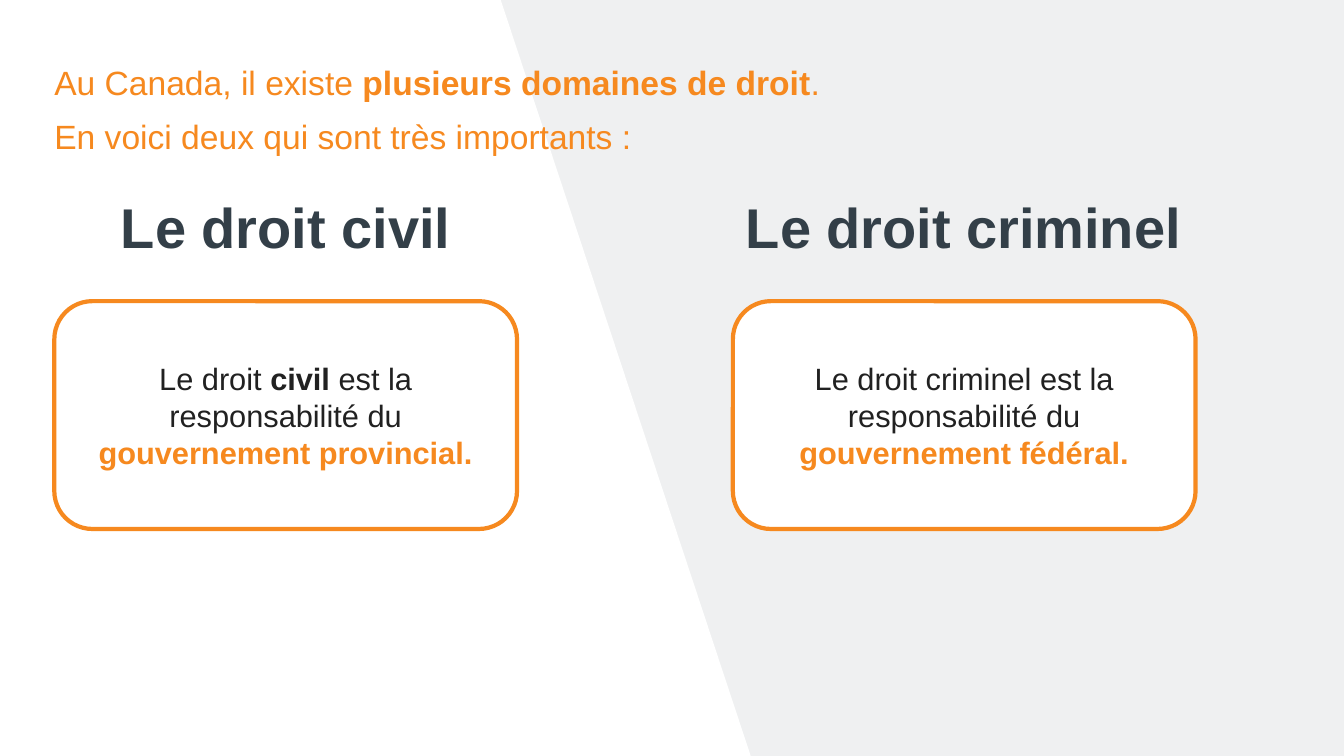
from pptx import Presentation
from pptx.dml.color import RGBColor
from pptx.enum.shapes import MSO_SHAPE
from pptx.enum.text import MSO_ANCHOR, PP_ALIGN
from pptx.util import Cm, Pt

ORANGE = RGBColor(0xF6, 0x89, 0x1F)
SLATE = RGBColor(0x33, 0x3F, 0x48)
DARK = RGBColor(0x21, 0x21, 0x21)
WHITE = RGBColor(0xFF, 0xFF, 0xFF)
PALE_GREY = RGBColor(0xEF, 0xF0, 0xF1)

ROUNDED = MSO_SHAPE.ROUNDED_RECTANGLE
CENTER, LEFT = PP_ALIGN.CENTER, PP_ALIGN.LEFT
TOP, MIDDLE, BOTTOM = MSO_ANCHOR.TOP, MSO_ANCHOR.MIDDLE, MSO_ANCHOR.BOTTOM

WIDTH, HEIGHT = 33.87, 19.05
HEADING_TOP, CARD_TOP = 5.05, 7.59
CARD_WIDTH, CARD_HEIGHT = 11.66, 5.74


class SlideBuilder:
    font_name = "Arial"

    def __init__(self, presentation):
        self.slide = presentation.slides.add_slide(presentation.slide_layouts[6])

    def background(self, color):
        fill = self.slide.background.fill
        fill.solid()
        fill.fore_color.rgb = color

    def panel(self, points, color):
        """Draw a filled polygon through points given in centimetres."""
        corners = [(Cm(x), Cm(y)) for x, y in points]
        builder = self.slide.shapes.build_freeform(*corners[0])
        builder.add_line_segments(corners[1:])
        shape = builder.convert_to_shape()
        shape.shadow.inherit = False
        shape.fill.solid()
        shape.fill.fore_color.rgb = color
        shape.line.fill.background()

    def add_runs(self, paragraph, runs, size, alignment):
        """Fill a paragraph with runs of (text, color, bold)."""
        paragraph.alignment = alignment
        for text, color, bold in runs:
            run = paragraph.add_run()
            run.text = text
            run.font.name = self.font_name
            run.font.size = Pt(size)
            run.font.bold = bold
            run.font.color.rgb = color

    def text_box(self, left, top, width, height, lines, size,
                 alignment=LEFT, anchor=TOP, line_spacing=1.0):
        box = self.slide.shapes.add_textbox(Cm(left), Cm(top), Cm(width), Cm(height))
        frame = box.text_frame
        frame.word_wrap = True
        frame.vertical_anchor = anchor
        frame.margin_left = frame.margin_right = 0
        frame.margin_top = frame.margin_bottom = 0
        for index, runs in enumerate(lines):
            paragraph = frame.add_paragraph() if index else frame.paragraphs[0]
            if index:
                paragraph.space_before = Pt(10)
            paragraph.line_spacing = line_spacing
            self.add_runs(paragraph, runs, size, alignment)

    def heading(self, left, width, text):
        self.text_box(left, HEADING_TOP, width, 2.54, [[(text, SLATE, True)]],
                      size=40, alignment=CENTER, line_spacing=0.9)

    def card(self, left, runs):
        shape = self.slide.shapes.add_shape(
            ROUNDED, Cm(left), Cm(CARD_TOP), Cm(CARD_WIDTH), Cm(CARD_HEIGHT))
        shape.shadow.inherit = False
        shape.fill.solid()
        shape.fill.fore_color.rgb = WHITE
        shape.line.color.rgb = ORANGE
        shape.line.width = Pt(3)
        frame = shape.text_frame
        frame.word_wrap = True
        frame.vertical_anchor = MIDDLE
        self.add_runs(frame.paragraphs[0], runs, 22, CENTER)


def main():
    presentation = Presentation()
    presentation.slide_width, presentation.slide_height = Cm(WIDTH), Cm(HEIGHT)
    builder = SlideBuilder(presentation)

    builder.background(PALE_GREY)
    builder.panel([(0, 0), (12.62, 0), (18.92, HEIGHT), (0, HEIGHT)], WHITE)

    builder.text_box(1.37, 2.67, 21.49, 1.27, [
        [("Au Canada, il existe ", ORANGE, False),
         ("plusieurs domaines de droit", ORANGE, True),
         (".", ORANGE, False)],
        [("En voici deux qui sont très importants :", ORANGE, False)],
    ], size=24, anchor=BOTTOM)

    columns = [
        (1.98, 10.44, "Le droit civil", 1.37, [
            ("Le droit ", DARK, False),
            ("civil", DARK, True),
            (" est la responsabilité du ", DARK, False),
            ("gouvernement provincial.", ORANGE, True)]),
        (17.04, 14.48, "Le droit criminel", 18.47, [
            ("Le droit criminel est la responsabilité du ", DARK, False),
            ("gouvernement fédéral.", ORANGE, True)]),
    ]
    for heading_left, heading_width, title, card_left, runs in columns:
        builder.heading(heading_left, heading_width, title)
        builder.card(card_left, runs)

    presentation.save("out.pptx")


if __name__ == "__main__":
    main()
